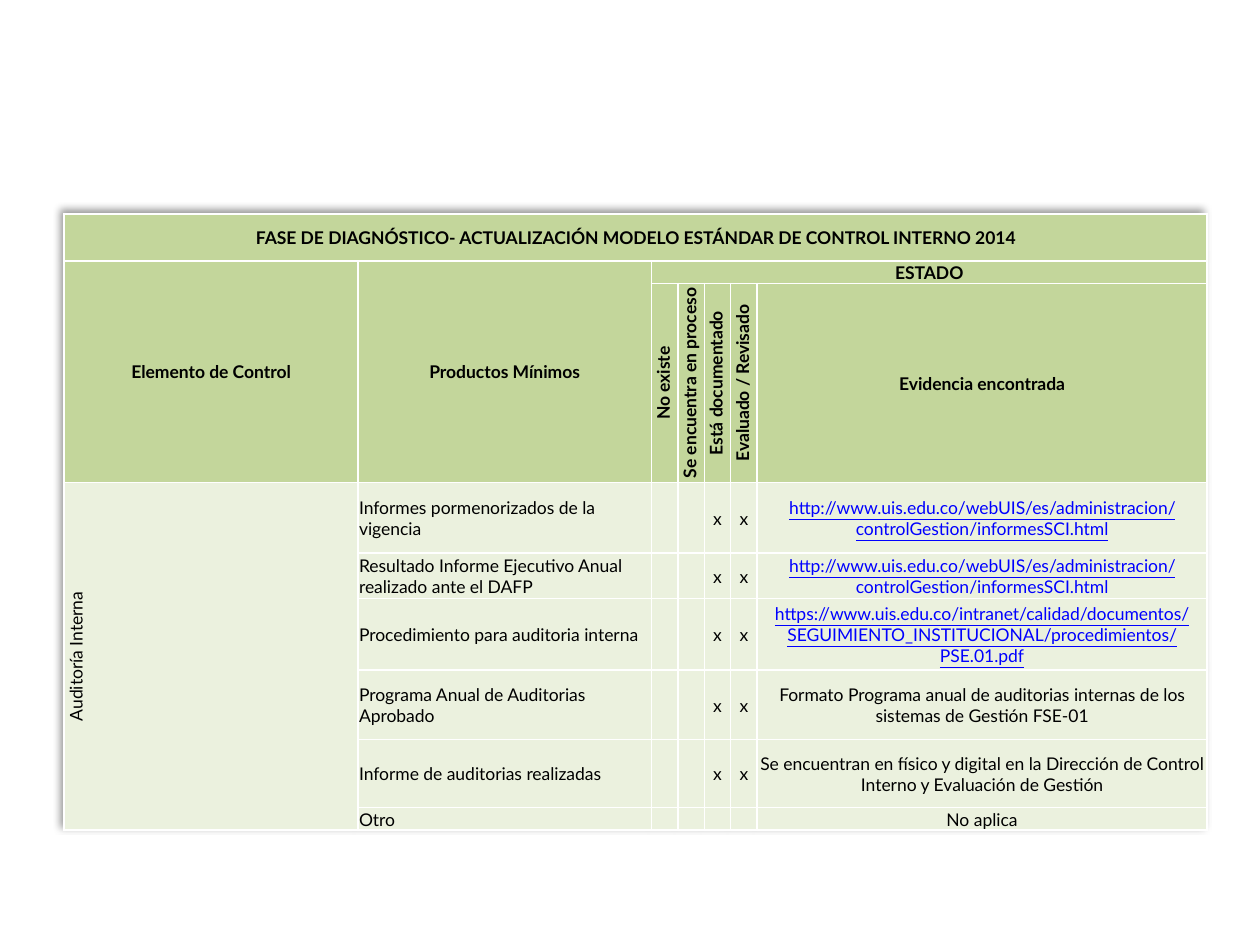
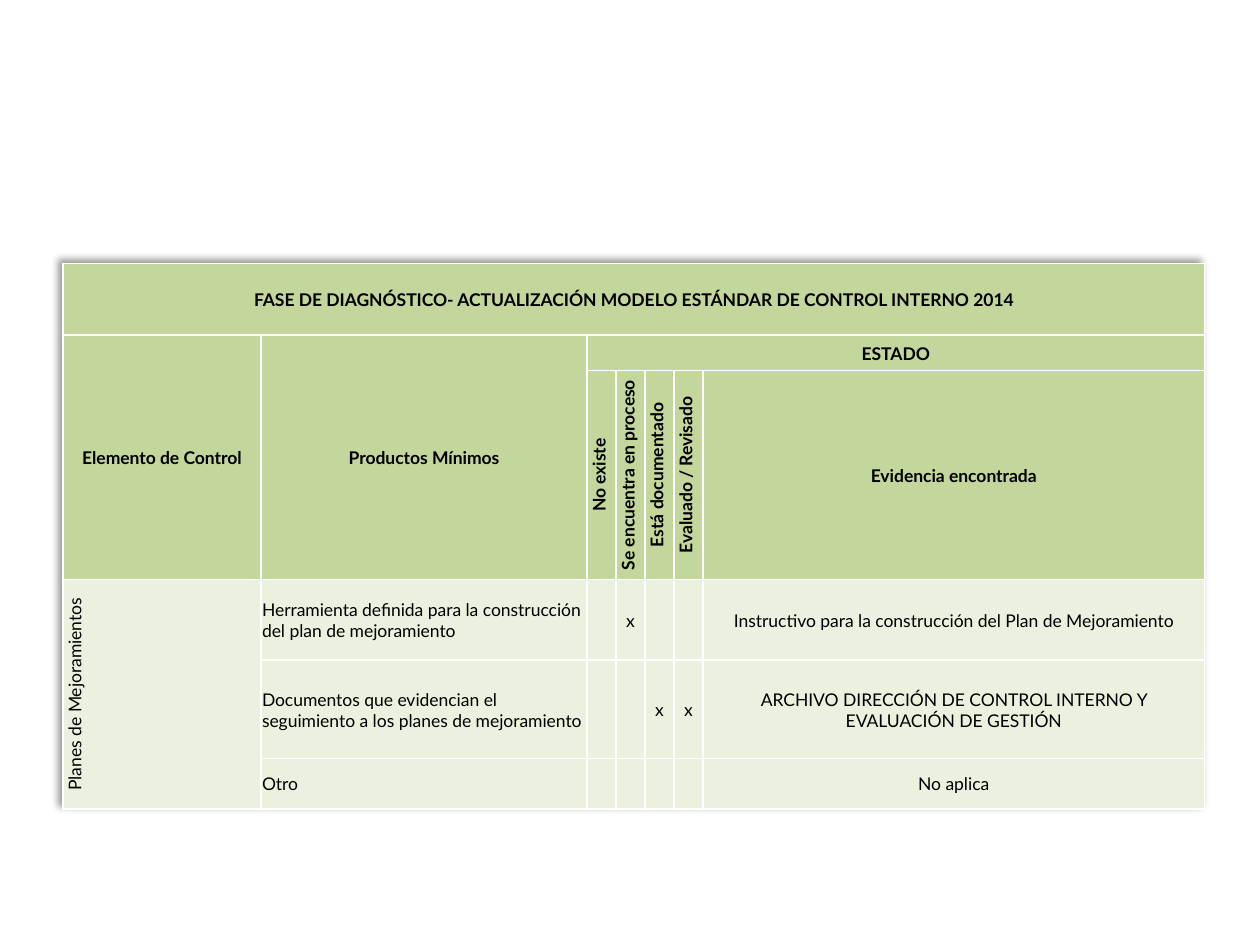
from lxml import etree
from pptx import Presentation
from pptx.dml.color import RGBColor
from pptx.enum import text
from pptx.oxml import ns
from pptx.util import Inches, Pt

FONT = "Lato"
SIZE = 10
COLORS = {"header": "C3D69B", "body": "EBF1DE", "border": "FFFFFF",
          "text": "000000", "link": "0000FF", "shadow": "000000"}
TITLE = "FASE DE DIAGNÓSTICO- ACTUALIZACIÓN MODELO ESTÁNDAR DE CONTROL INTERNO 2014"
STATES = ["No existe", "Se encuentra en proceso", "Está documentado", "Evaluado / Revisado"]
HEADER_ROWS = 3
FIRST_STATE = 2
EVIDENCE = FIRST_STATE + len(STATES)
REPORTS_URL = "http://www.uis.edu.co/webUIS/es/administracion/controlGestion/informesSCI.html"
PROCEDURE_URL = ("https://www.uis.edu.co/intranet/calidad/documentos/"
                 "SEGUIMIENTO_INSTITUCIONAL/procedimientos/PSE.01.pdf")

DONE = ("Está documentado", "Evaluado / Revisado")
AUDIT = [
    ("Informes pormenorizados de la vigencia", DONE, REPORTS_URL),
    ("Resultado Informe Ejecutivo Anual realizado ante el DAFP", DONE, REPORTS_URL),
    ("Procedimiento para auditoria interna", DONE, PROCEDURE_URL),
    ("Programa Anual de Auditorias Aprobado", DONE,
     "Formato Programa anual de auditorias internas de los sistemas de Gestión FSE-01"),
    ("Informe de auditorias realizadas", DONE,
     "Se encuentran en físico y digital en la Dirección de Control Interno "
     "y Evaluación de Gestión"),
    ("Otro", (), "No aplica"),
]
IMPROVEMENT = [
    ("Herramienta definida para la construcción del plan de mejoramiento",
     ("Se encuentra en proceso",),
     "Instructivo para la construcción del Plan de Mejoramiento"),
    ("Documentos que evidencian el seguimiento a los planes de mejoramiento", DONE,
     "ARCHIVO DIRECCIÓN DE CONTROL INTERNO Y EVALUACIÓN DE GESTIÓN"),
    ("Otro", (), "No aplica"),
]


def add_xml(parent, tag, **attrs):
    return etree.SubElement(parent, ns.qn(tag), attrs)


def write(cell, content, bold=False, color="text", underline=False, centered=True,
          vertical=False):
    p = cell.text_frame.paragraphs[0]
    p.alignment = text.PP_ALIGN.CENTER if centered else text.PP_ALIGN.LEFT
    r = p.add_run()
    r.text = content
    r.font.name = FONT
    r.font.size = Pt(SIZE)
    r.font.bold = bold
    r.font.underline = underline
    r.font.color.rgb = RGBColor.from_string(COLORS[color])
    if vertical:
        cell._tc.get_or_add_tcPr().set("vert", "vert270")


def style_cell(cell, fill):
    cell.margin_left = cell.margin_right = cell.margin_top = Inches(0.01)
    cell.margin_bottom = 0
    cell.vertical_anchor = text.MSO_ANCHOR.MIDDLE
    tcPr = cell._tc.get_or_add_tcPr()
    for side in ("a:lnL", "a:lnR", "a:lnT", "a:lnB"):
        ln = add_xml(tcPr, side, w=str(Pt(1)))
        add_xml(add_xml(ln, "a:solidFill"), "a:srgbClr", val=COLORS["border"])
    cell.fill.solid()
    cell.fill.fore_color.rgb = RGBColor.from_string(COLORS[fill])
    if not cell.text_frame.text:
        add_xml(cell.text_frame.paragraphs[0]._p, "a:endParaRPr", sz=str(SIZE * 100))


def add_shadow(table):
    effects = etree.Element(ns.qn("a:effectLst"))
    shadow = add_xml(effects, "a:outerShdw", blurRad=str(Pt(4)), dist=str(Pt(3)),
                     dir="13500000", algn="br", rotWithShape="0")
    color = add_xml(shadow, "a:srgbClr", val=COLORS["shadow"])
    add_xml(color, "a:alpha", val="40000")
    table._tbl.tblPr.insert(0, effects)


def write_header(table):
    last = len(table.columns) - 1
    table.cell(0, 0).merge(table.cell(0, last))
    write(table.cell(0, 0), TITLE, bold=True)
    for col, label in enumerate(["Elemento de Control", "Productos Mínimos"]):
        table.cell(1, col).merge(table.cell(2, col))
        write(table.cell(1, col), label, bold=True)
    table.cell(1, FIRST_STATE).merge(table.cell(1, last))
    write(table.cell(1, FIRST_STATE), "ESTADO", bold=True)
    for col, state in enumerate(STATES, FIRST_STATE):
        write(table.cell(2, col), state, bold=True, vertical=True)
    write(table.cell(2, EVIDENCE), "Evidencia encontrada", bold=True)


def write_products(table, element, products):
    table.cell(HEADER_ROWS, 0).merge(table.cell(len(table.rows) - 1, 0))
    write(table.cell(HEADER_ROWS, 0), element, vertical=True)
    for row, (product, marks, evidence) in enumerate(products, HEADER_ROWS):
        write(table.cell(row, 1), product, centered=False)
        for mark in marks:
            write(table.cell(row, FIRST_STATE + STATES.index(mark)), "x")
        is_link = evidence.startswith("http")
        write(table.cell(row, EVIDENCE), evidence, underline=is_link,
              color="link" if is_link else "text")


def add_diagnosis(prs, left, top, widths, heights, element, products):
    s = prs.slides.add_slide(prs.slide_layouts[6])
    table = s.shapes.add_table(len(heights), len(widths), Inches(left), Inches(top),
                               Inches(sum(widths)), Inches(sum(heights))).table
    table.first_row = table.horz_banding = False
    for column, width in zip(table.columns, widths):
        column.width = Inches(width)
    for row, height in zip(table.rows, heights):
        row.height = Inches(height)
    write_header(table)
    write_products(table, element, products)
    for i, row in enumerate(table.rows):
        for cell in row.cells:
            style_cell(cell, "header" if i < HEADER_ROWS else "body")
    add_shadow(table)


def main():
    prs = Presentation()
    prs.slide_width, prs.slide_height = Inches(10), Inches(7.5)
    add_diagnosis(prs, 0.51, 1.7, [2.33, 2.33] + [0.21] * len(STATES) + [3.57],
                  [0.37, 0.18, 1.58, 0.56, 0.36, 0.57, 0.55, 0.54, 0.18],
                  "Auditoría Interna", AUDIT)
    add_diagnosis(prs, 0.5, 2.09, [1.57, 2.59] + [0.23] * len(STATES) + [3.98],
                  [0.57, 0.28, 1.66, 0.64, 0.78, 0.4],
                  "Planes de Mejoramientos", IMPROVEMENT)
    prs.save("out.pptx")


if __name__ == "__main__":
    main()
